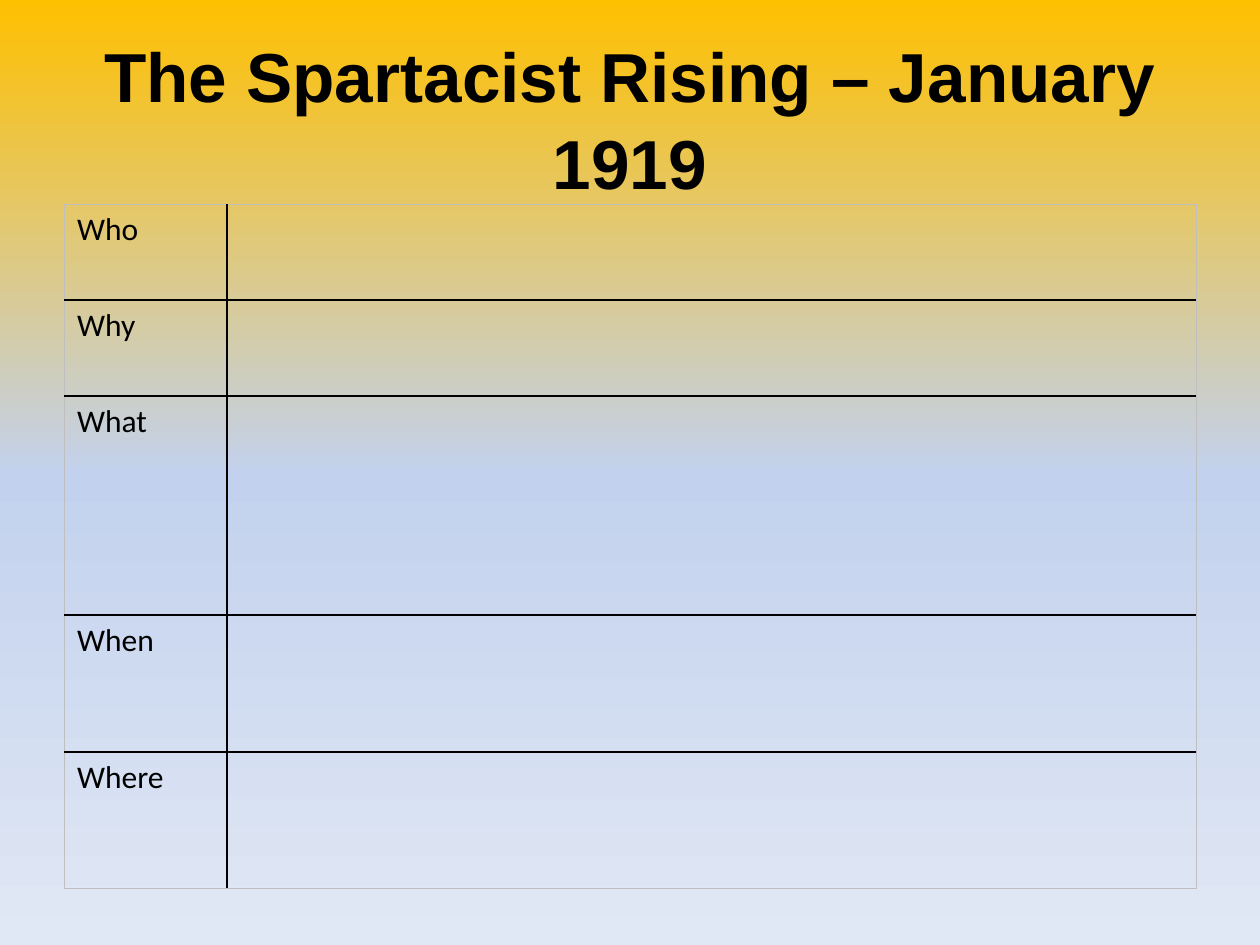
from copy import deepcopy
from dataclasses import dataclass

from lxml import etree
from pptx import Presentation
from pptx.dml.color import RGBColor
from pptx.enum.text import MSO_ANCHOR, PP_ALIGN
from pptx.oxml.ns import qn
from pptx.util import Cm, Pt

CENTER = PP_ALIGN.CENTER
MIDDLE = MSO_ANCHOR.MIDDLE
BLANK_LAYOUT = 6


@dataclass(frozen=True)
class Theme:
    text: str = "000000"
    grid: str = "000000"
    frame: str = "BFBFBF"
    background: tuple = ((0, "FFC000"), (0.5, "C2D1ED"), (1, "E1E8F5"))
    title_font: str = "Arial"
    body_font: str = "Calibri"
    title_size: float = 39.6
    body_size: float = 18
    grid_width: float = 1
    frame_width: float = 0.5


class SlideBuilder:
    def __init__(self, slide, theme):
        self.slide = slide
        self.theme = theme

    def gradient_background(self):
        fill = self.slide.background.fill
        fill.gradient()
        fill.gradient_angle = 270
        stop_list = self.slide.element.find(".//" + qn("a:gsLst"))
        stop_list.append(deepcopy(stop_list[-1]))
        for stop, (position, color) in zip(fill.gradient_stops, self.theme.background):
            stop.position = position
            stop.color.rgb = RGBColor.from_string(color)

    def add_run(self, paragraph, text, font, size, bold=False):
        run = paragraph.add_run()
        run.text = text
        run.font.name = font
        run.font.size = Pt(size)
        run.font.bold = bold
        run.font.color.rgb = RGBColor.from_string(self.theme.text)

    def title(self, text, left, top, width, height):
        box = self.slide.shapes.add_textbox(Cm(left), Cm(top), Cm(width), Cm(height))
        frame = box.text_frame
        frame.word_wrap = True
        frame.vertical_anchor = MIDDLE
        paragraph = frame.paragraphs[0]
        paragraph.alignment = CENTER
        paragraph.line_spacing = 1.04
        self.add_run(paragraph, text, self.theme.title_font, self.theme.title_size, True)

    def cell_border(self, cell, side, is_frame):
        theme = self.theme
        color, width = (
            (theme.frame, theme.frame_width) if is_frame else (theme.grid, theme.grid_width)
        )
        line = etree.Element(qn(f"a:ln{side}"), w=str(Pt(width)))
        solid = etree.SubElement(line, qn("a:solidFill"))
        etree.SubElement(solid, qn("a:srgbClr"), val=color)
        return line

    def question_table(self, questions, left, top, column_widths, row_heights):
        """Put one question in each row, with an empty cell for its answer."""
        last_row, last_column = len(row_heights) - 1, len(column_widths) - 1
        table = self.slide.shapes.add_table(
            len(row_heights), len(column_widths), Cm(left), Cm(top),
            Cm(sum(column_widths)), Cm(sum(row_heights)),
        ).table
        table.first_row = False
        table.horz_banding = False
        for column, width in zip(table.columns, column_widths):
            column.width = Cm(width)
        for row_index, (row, height) in enumerate(zip(table.rows, row_heights)):
            row.height = Cm(height)
            for column_index, cell in enumerate(row.cells):
                cell.fill.background()
                on_frame = {
                    "L": column_index == 0,
                    "R": column_index == last_column,
                    "T": row_index == 0,
                    "B": row_index == last_row,
                }
                properties = cell._tc.get_or_add_tcPr()
                for position, (side, is_frame) in enumerate(on_frame.items()):
                    properties.insert(position, self.cell_border(cell, side, is_frame))
            self.add_run(
                row.cells[0].text_frame.paragraphs[0], questions[row_index],
                self.theme.body_font, self.theme.body_size,
            )


def main():
    presentation = Presentation()
    presentation.slide_width = Cm(25.4)
    presentation.slide_height = Cm(19.05)
    slide = presentation.slides.add_slide(presentation.slide_layouts[BLANK_LAYOUT])
    builder = SlideBuilder(slide, Theme())
    builder.gradient_background()
    builder.question_table(
        ["Who", "Why", "What", "When", "Where"],
        left=1.3, top=4.12,
        column_widths=[3.28, 19.53],
        row_heights=[1.93, 1.93, 4.42, 2.76, 2.76],
    )
    builder.title(
        "The Spartacist Rising – January 1919", left=1.27, top=0.76, width=22.86, height=3.18
    )
    presentation.save("out.pptx")


if __name__ == "__main__":
    main()
